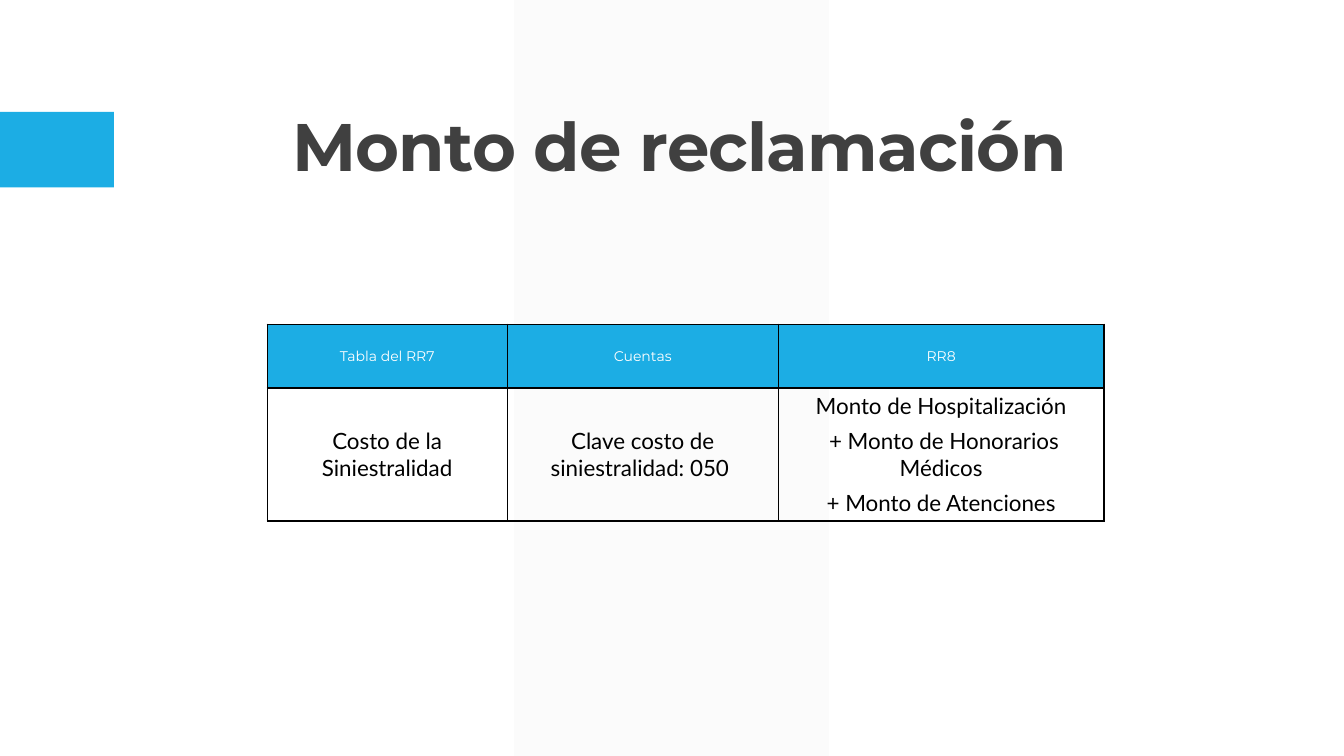
"""Build the claim amount slide with its three-column table."""
from dataclasses import dataclass

from lxml import etree
from pptx import Presentation
from pptx.dml.color import RGBColor
from pptx.enum.shapes import MSO_SHAPE
from pptx.enum.text import MSO_ANCHOR, PP_ALIGN
from pptx.oxml.ns import qn
from pptx.util import Inches, Pt

BLUE = RGBColor(0x1C, 0xAD, 0xE4)
PALE_GRAY = RGBColor(0xF2, 0xF2, 0xF2)
DARK_GRAY = RGBColor(0x40, 0x40, 0x40)
WHITE = RGBColor(0xFF, 0xFF, 0xFF)
BLACK = RGBColor(0x00, 0x00, 0x00)
RECTANGLE = MSO_SHAPE.RECTANGLE
PARALLELOGRAM = MSO_SHAPE.PARALLELOGRAM
CENTER = PP_ALIGN.CENTER
MIDDLE = MSO_ANCHOR.MIDDLE
BOTTOM = MSO_ANCHOR.BOTTOM
THIN, THICK = Pt(1), Pt(1.5)


@dataclass(frozen=True)
class TextStyle:
    font: str
    size: float
    color: RGBColor
    bold: bool = False
    space_after: float = 0
    line_spacing: float = 1.0


@dataclass(frozen=True)
class Column:
    width: float
    heading: str
    body: str


TITLE = TextStyle("Montserrat", 48, DARK_GRAY, bold=True, line_spacing=0.9)
HEADING = TextStyle("Montserrat", 10, WHITE)
BODY = TextStyle("Lato", 16, BLACK, space_after=6)
ROW_HEIGHTS = (0.63, 1.32)
COLUMNS = (
    Column(2.38, "Tabla del RR7", "Costo de la Siniestralidad"),
    Column(2.69, "Cuentas", "Clave costo de siniestralidad: 050 "),
    Column(3.23, "RR8", "Monto de Hospitalización\n + Monto de Honorarios Médicos\n+ Monto de Atenciones"),
)


def write_text(frame, text: str, style: TextStyle) -> None:
    """Fill a text frame with centred paragraphs in one style."""
    frame.text = text
    frame.word_wrap = True
    for para in frame.paragraphs:
        para.alignment = CENTER
        para.space_after = Pt(style.space_after)
        para.line_spacing = style.line_spacing
        para.font.name = style.font
        para.font.size = Pt(style.size)
        para.font.bold = style.bold
        para.font.color.rgb = style.color


def add_block(page, kind, left: float, top: float, width: float, height: float, color: RGBColor):
    """Add a plain filled shape without an outline."""
    block = page.shapes.add_shape(kind, Inches(left), Inches(top), Inches(width), Inches(height))
    block.shadow.inherit = False
    block.fill.solid()
    block.fill.fore_color.rgb = color
    block.line.fill.background()
    return block


def set_borders(cell, top: int, bottom: int) -> None:
    """Draw black borders on all four sides of a cell."""
    properties = cell._tc.get_or_add_tcPr()
    widths = {"a:lnL": THIN, "a:lnR": THIN, "a:lnT": top, "a:lnB": bottom}
    for index, (tag, width) in enumerate(widths.items()):
        line = etree.Element(qn(tag), w=str(int(width)))
        fill = etree.SubElement(line, qn("a:solidFill"))
        etree.SubElement(fill, qn("a:srgbClr"), val=str(BLACK))
        properties.insert(index, line)


def fill_cell(cell, text: str, is_heading: bool) -> None:
    """Write and style one table cell."""
    cell.vertical_anchor = MIDDLE
    cell.margin_left = cell.margin_right = Inches(0.05)
    cell.margin_top = cell.margin_bottom = 0
    write_text(cell.text_frame, text, HEADING if is_heading else BODY)
    if is_heading:
        cell.fill.solid()
        cell.fill.fore_color.rgb = BLUE
        set_borders(cell, THICK, THIN)
    else:
        cell.fill.background()
        set_borders(cell, THIN, THICK)


def add_claim_table(page) -> None:
    """Add the table of accounts and claim amounts."""
    width = sum(column.width for column in COLUMNS)
    frame = page.shapes.add_table(len(ROW_HEIGHTS), len(COLUMNS), Inches(2.65), Inches(3.22),
                                  Inches(width), Inches(sum(ROW_HEIGHTS)))
    table = frame.table
    table.horz_banding = False
    for row, height in zip(table.rows, ROW_HEIGHTS):
        row.height = Inches(height)
    for index, column in enumerate(COLUMNS):
        table.columns[index].width = Inches(column.width)
        fill_cell(table.cell(0, index), column.heading, True)
        fill_cell(table.cell(1, index), column.body, False)


def add_title(page) -> None:
    """Add the slide title with slightly tightened letters."""
    box = page.shapes.add_textbox(Inches(1.24), Inches(0.63), Inches(11), Inches(1.27))
    frame = box.text_frame
    frame.vertical_anchor = BOTTOM
    write_text(frame, "Monto de reclamación", TITLE)
    span = frame.paragraphs[0].runs[0]
    span._r.get_or_add_rPr().set("spc", "-50")


def main() -> None:
    """Build and save the deck."""
    deck = Presentation()
    deck.slide_width, deck.slide_height = Inches(13.33), Inches(7.5)
    page = deck.slides.add_slide(deck.slide_layouts[6])
    band = add_block(page, PARALLELOGRAM, 5.1, 0, 3.12, 7.5, PALE_GRAY)
    band.adjustments[0] = 0
    color = band.fill._xPr.find(qn("a:solidFill"))[0]
    etree.SubElement(color, qn("a:alpha"), val="30000")
    add_block(page, RECTANGLE, 0, 1.11, 1.13, 0.75, BLUE)
    add_title(page)
    add_claim_table(page)
    deck.save("out.pptx")


if __name__ == "__main__":
    main()
